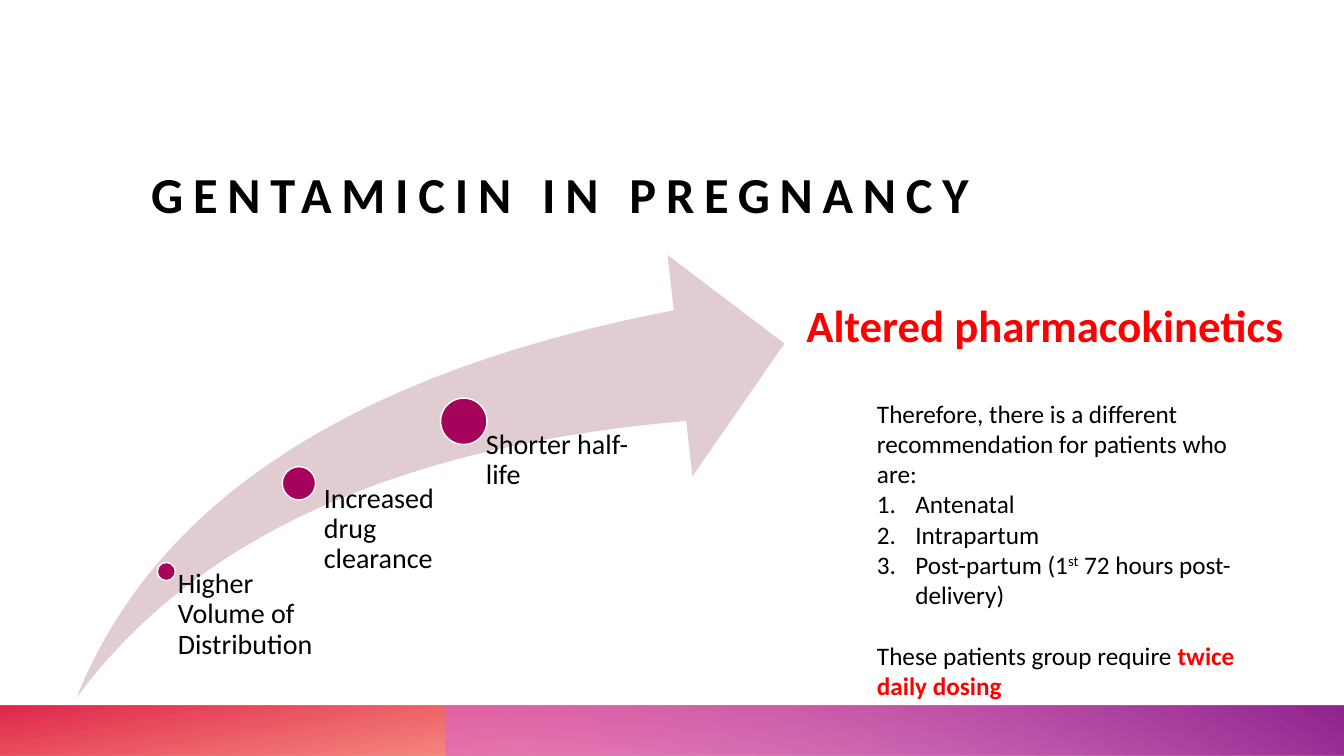
import pptx
import pptx.util
import pptx.dml.color
import pptx.enum.shapes
import pptx.enum.text
import pptx.oxml
import pptx.oxml.ns

Inches = pptx.util.Inches
Pt = pptx.util.Pt
RGBColor = pptx.dml.color.RGBColor
SHAPE = pptx.enum.shapes.MSO_SHAPE
ANCHOR = pptx.enum.text.MSO_ANCHOR
qn = pptx.oxml.ns.qn

BLACK = RGBColor(0x00, 0x00, 0x00)
WHITE = RGBColor(0xFF, 0xFF, 0xFF)
RED = RGBColor(0xFF, 0x00, 0x00)
PLUM = RGBColor(0xA6, 0x02, 0x5C)
PALE_PLUM = RGBColor(0xE1, 0xCC, 0xD2)
ORANGE = RGBColor(0xFE, 0x4A, 0x00)
CRIMSON = RGBColor(0xDA, 0x00, 0x2F)
ORCHID = RGBColor(0xD8, 0x61, 0xD4)
PURPLE = RGBColor(0x92, 0x24, 0x8E)
FONT = "Calibri"


def sub_element(parent, tag, **attributes):
    child = parent.makeelement(qn(tag), attributes)
    parent.append(child)
    return child


def set_font(font, size, color=BLACK, bold=False):
    font.name, font.size, font.bold = FONT, Pt(size), bold
    font.color.rgb = color


def add_shape(s, kind, x, y, w, h):
    sp = s.shapes.add_shape(kind, Inches(x), Inches(y), Inches(w), Inches(h))
    sp.shadow.inherit = False
    sp.line.fill.background()
    return sp


def add_text_frame(s, x, y, w, h, insets=None):
    tf = s.shapes.add_textbox(Inches(x), Inches(y), Inches(w), Inches(h)).text_frame
    tf.word_wrap = True
    if insets:
        tf.margin_left, tf.margin_top, tf.margin_right, tf.margin_bottom = map(Inches, insets)
    return tf


def add_gradient_bar(s, x, y, w, h, stops, angle, rotation=0):
    """Mirrored bar; stops are (percent, colour, opacity percent)."""
    sp = add_shape(s, SHAPE.RECTANGLE, x, y, w, h)
    sp.rotation = rotation
    sp._element.spPr.find(qn("a:xfrm")).set("flipH", "1")
    sp.fill.gradient()
    sp.fill.gradient_angle = 360 - angle
    for stop, (percent, color, opacity) in zip(sp.fill.gradient_stops, stops):
        stop.position = percent / 100
        stop.color.rgb = color
    colors = sp._element.spPr.iter(qn("a:srgbClr"))
    for clr, (_, _, opacity) in zip(list(colors), stops):
        if opacity < 100:
            sub_element(clr, "a:alpha", val=str(opacity * 1000))


def add_footer(s, x, y, w, h):
    add_gradient_bar(s, x, y, w, h, [(14, ORANGE, 28), (100, CRIMSON, 85)], 100, 180)
    left = 4.42
    add_gradient_bar(s, x + left, y, w - left, h,
                     [(9, ORCHID, 55), (99, PURPLE, 100)], 240)


def add_title(s, x, y, w, h):
    tf = add_text_frame(s, x, y, w, h, (0, 0, 0, 0))
    tf.vertical_anchor = ANCHOR.BOTTOM
    p = tf.paragraphs[0]
    r = p.add_run()
    r.text = "GENTAMICIN IN PREGNANCY"
    set_font(p.font, 36, bold=True)
    r._r.get_or_add_rPr().set("spc", "700")


def add_upward_arrow(s, x, y, w, h):
    sp = add_shape(s, SHAPE.SWOOSH_ARROW, x, y, w, h)
    sp.adjustments[0] = sp.adjustments[1] = 0.25
    sp.fill.solid()
    sp.fill.fore_color.rgb = PALE_PLUM

    # Dot offset and diameter, then label offset and size
    steps = [
        ("Higher Volume of Distribution", 0.8, 3.05, 0.18, 0.91, 3.12, 1.64, 1.27),
        ("Increased drug clearance", 2.04, 2.1, 0.33, 2.28, 2.27, 1.68, 2.12),
        ("Shorter half-life", 3.61, 1.42, 0.46, 3.82, 1.74, 1.68, 1.85),
    ]
    for text, dot_x, dot_y, size, label_x, label_y, label_w, label_h in steps:
        dot = add_shape(s, SHAPE.OVAL, x + dot_x, y + dot_y, size, size)
        dot.fill.solid()
        dot.fill.fore_color.rgb = PLUM
        dot.line.color.rgb = WHITE
        dot.line.width = Pt(1)
        tf = add_text_frame(s, x + label_x, y + label_y, label_w, label_h,
                            (size * 0.52, 0, 0, 0))
        p = tf.paragraphs[0]
        p.text = text
        p.line_spacing = 0.9
        set_font(p.font, 20)


def add_conclusion(s, x, y, w, h):
    # Heading
    p = add_text_frame(s, x, y, w, 0.64).paragraphs[0]
    p.text = "Altered pharmacokinetics"
    set_font(p.font, 32, RED, True)

    # Patient groups
    tf = add_text_frame(s, x + 0.7, y + 1, 3.87, h - 1)
    p = tf.paragraphs[0]
    p.text = "Therefore, there is a different recommendation for patients who are:"
    set_font(p.font, 18)
    for parts in (["Antenatal"], ["Intrapartum"],
                  ["Post-partum (1", "st", " 72 hours post-delivery)"]):
        p = tf.add_paragraph()
        pPr = p._p.get_or_add_pPr()
        pPr.set("marL", str(Inches(0.38)))
        pPr.set("indent", str(-Inches(0.38)))
        sub_element(pPr, "a:buAutoNum", type="arabicPeriod")
        set_font(p.font, 18)
        for part in parts:
            r = p.add_run()
            r.text = part
            if part == "st":
                r._r.get_or_add_rPr().set("baseline", "30000")

    # Dosing advice
    p = tf.add_paragraph()
    p.space_before = Pt(22)
    for text, color, bold in (("These patients group require ", BLACK, False),
                              ("twice daily dosing", RED, True)):
        r = p.add_run()
        r.text = text
        set_font(r.font, 18, color, bold)


def main():
    prs = pptx.Presentation()
    prs.slide_width, prs.slide_height = Inches(13.33), Inches(7.5)
    s = prs.slides.add_slide(prs.slide_layouts[6])
    add_footer(s, 0, 7, 13.33, 0.5)
    add_title(s, 1.5, 0.87, 11.2, 1.35)
    add_upward_arrow(s, 0.76, 2.53, 7.02, 4.39)
    add_conclusion(s, 7.9, 2.9, 4.96, 4.13)
    prs.save("out.pptx")


if __name__ == "__main__":
    main()
